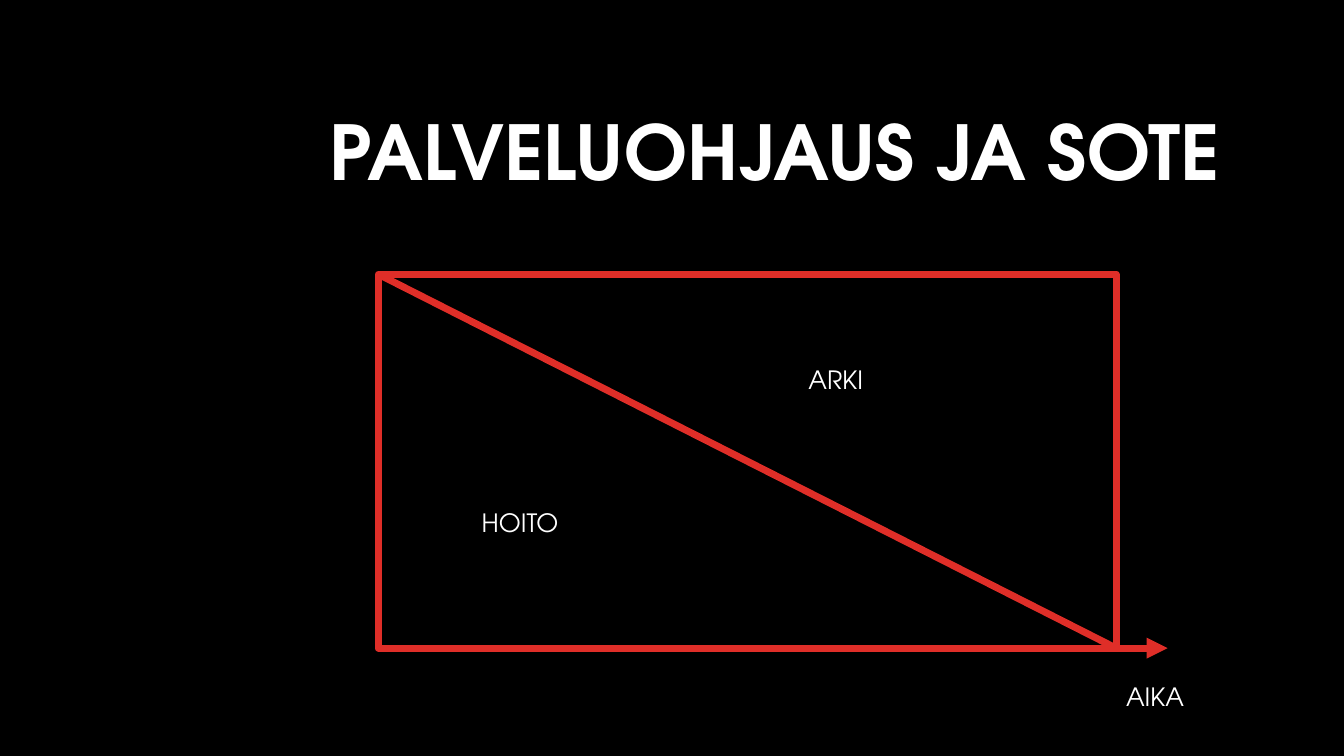
from pptx import Presentation
from pptx.dml.color import RGBColor
from pptx.enum import shapes as sh, text as tx
from pptx.oxml.ns import qn
from pptx.util import Inches, Pt
from lxml import etree

BLACK = RGBColor(0x00, 0x00, 0x00)
WHITE = RGBColor(0xFF, 0xFF, 0xFF)
RED = RGBColor(0xDF, 0x2E, 0x28)
FONT = "TeX Gyre Adventor"
LINE = Pt(5)


def style(para, size, bold=False):
    para.alignment = tx.PP_ALIGN.LEFT
    font = para.font
    font.name, font.size, font.bold = FONT, Pt(size), bold
    font.color.rgb = WHITE


def add_title(slide, words, x, y, w, h):
    title = slide.shapes.title
    title.left, title.top = Inches(x), Inches(y)
    title.width, title.height = Inches(w), Inches(h)
    frame = title.text_frame
    frame.text = words
    frame.word_wrap = True
    frame.auto_size = tx.MSO_AUTO_SIZE.NONE
    frame.vertical_anchor = tx.MSO_ANCHOR.MIDDLE
    para = frame.paragraphs[0]
    para.line_spacing = 0.9
    style(para, 54, True)


def add_label(slide, words, x, y, w):
    box = slide.shapes.add_textbox(Inches(x), Inches(y), Inches(w), Inches(0.4))
    frame = box.text_frame
    frame.word_wrap = True
    frame.auto_size = tx.MSO_AUTO_SIZE.SHAPE_TO_FIT_TEXT
    frame.text = words
    style(frame.paragraphs[0], 18)


def add_line(slide, x1, y1, x2, y2, arrow=False):
    line = slide.shapes.add_connector(
        sh.MSO_CONNECTOR.STRAIGHT, Inches(x1), Inches(y1), Inches(x2), Inches(y2))
    line.line.color.rgb = RED
    line.line.width = LINE
    if arrow:
        tail = etree.SubElement(line.line._get_or_add_ln(), qn("a:tailEnd"))
        tail.set("type", "triangle")
    etree.SubElement(line._element.spPr, qn("a:effectLst"))


def add_diagram(slide, x, y, w, h):
    # Frame split by a diagonal
    frame = slide.shapes.add_shape(
        sh.MSO_SHAPE.RECTANGLE, Inches(x), Inches(y), Inches(w), Inches(h))
    frame.shadow.inherit = False
    frame.fill.background()
    frame.line.color.rgb = RED
    frame.line.width = LINE
    right, base = x + w, y + h
    add_line(slide, x, y, right, base)

    # Labels of the time axis and the two halves
    add_label(slide, "AIKA", right, base + 0.28, 1.58)
    add_label(slide, "HOITO", x + 0.93, y + 2.26, 1.77)
    add_label(slide, "ARKI", x + 4.17, y + 0.85, 1.22)

    # Time arrow
    add_line(slide, right, base, right + 0.51, base, arrow=True)


def main():
    deck = Presentation()
    deck.slide_width, deck.slide_height = Inches(13.33), Inches(7.5)
    slide = deck.slides.add_slide(deck.slide_layouts.get_by_name("Title Only"))
    slide.background.fill.solid()
    slide.background.fill.fore_color.rgb = BLACK
    add_title(slide, "PALVELUOHJAUS JA SOTE", 3.17, 0.84, 9.42, 1.41)
    add_diagram(slide, 3.75, 2.72, 7.32, 3.71)
    deck.save("out.pptx")


if __name__ == "__main__":
    main()
